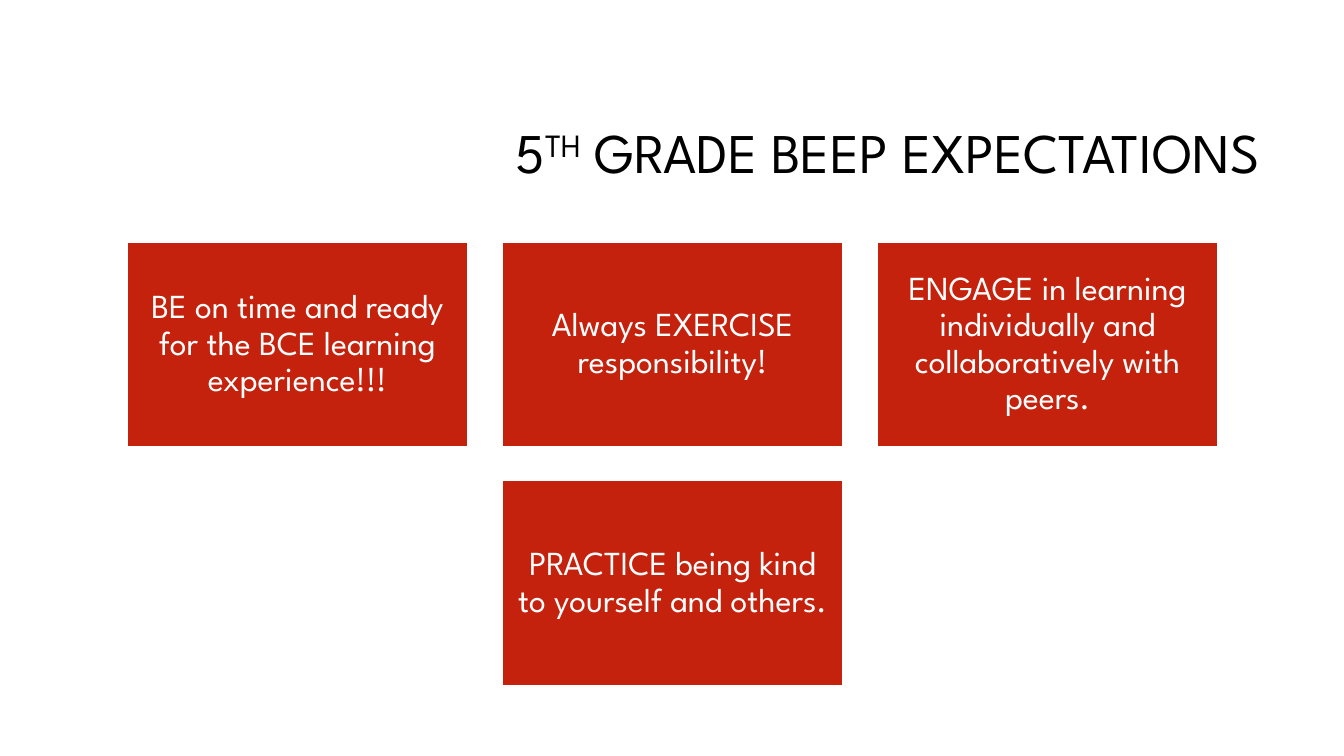
"""Build the slide of four fifth-grade expectations."""
from pptx import Presentation
from pptx.dml.color import RGBColor
from pptx.enum.shapes import MSO_SHAPE
from pptx.enum.text import MSO_ANCHOR, PP_ALIGN
from pptx.util import Inches, Pt


def color(hex_string):
    """Turn a hex string into a colour."""
    return RGBColor.from_string(hex_string)


def write(shape, pieces, alignment, size, text_color, margins):
    """Write one paragraph of (text, baseline) pieces into a shape."""
    frame = shape.text_frame
    frame_format = {"word_wrap": True, "vertical_anchor": MSO_ANCHOR.MIDDLE, **margins}
    for name, value in frame_format.items():
        setattr(frame, name, value)
    paragraph = frame.paragraphs[0]
    paragraph.alignment = alignment
    paragraph.line_spacing = 0.9
    for text, baseline in pieces:
        run = paragraph.add_run()
        run.text = text
        for name, value in {"name": "League Spartan", "size": Pt(size)}.items():
            setattr(run.font, name, value)
        run.font.color.rgb = color(text_color)
        if baseline:
            run.font._element.set("baseline", str(baseline * 1000))


presentation = Presentation()
presentation.slide_width = Inches(13.33)
presentation.slide_height = Inches(7.5)
slide = presentation.slides.add_slide(presentation.slide_layouts[6])

title = slide.shapes.add_textbox(Inches(3.17), Inches(0.84), Inches(9.42), Inches(1.41))
title_pieces = [("5", 0), ("TH", 30), (" GRADE BEEP EXPECTATIONS", 0)]
write(title, title_pieces, PP_ALIGN.RIGHT, 40, "000000", {})

LEFT, TOP = 1.26, 2.4
CARD_WIDTH, CARD_HEIGHT, GAP = 3.38, 2.03, 0.34
card_margins = {f"margin_{side}": Inches(0.1) for side in ("left", "top", "right", "bottom")}
expectations = [
    (0, 0, "BE on time and ready for the BCE learning experience!!!"),
    (1, 0, "Always EXERCISE responsibility!"),
    (2, 0, "ENGAGE in learning individually and collaboratively with peers."),
    (1, 1, "PRACTICE being kind to yourself and others."),
]
for column, row, text in expectations:
    card = slide.shapes.add_shape(
        MSO_SHAPE.RECTANGLE,
        Inches(LEFT + column * (CARD_WIDTH + GAP)),
        Inches(TOP + row * (CARD_HEIGHT + GAP)),
        Inches(CARD_WIDTH),
        Inches(CARD_HEIGHT),
    )
    card.shadow.inherit = False
    card.fill.solid()
    card.fill.fore_color.rgb = color("C4220D")
    card.line.color.rgb = color("FFFFFF")
    card.line.width = Pt(1)
    write(card, [(text, 0)], PP_ALIGN.CENTER, 24, "FFFFFF", card_margins)

presentation.save("out.pptx")
